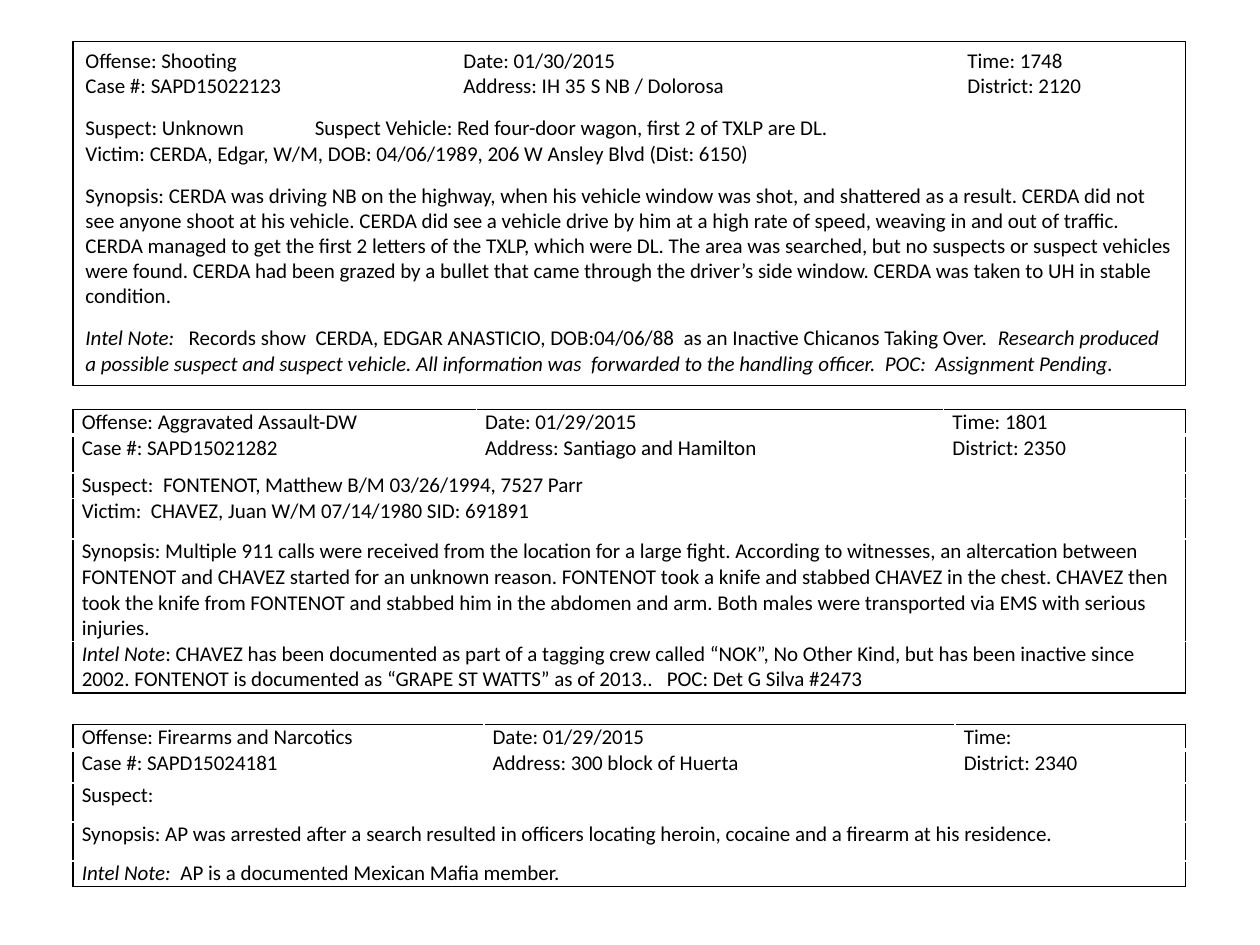
from lxml.etree import SubElement as sub
from pptx import Presentation
from pptx.dml.color import RGBColor as RGB
from pptx.enum.shapes import MSO_SHAPE as SHAPE
from pptx.enum.text import MSO_ANCHOR as ANCHOR, PP_ALIGN as ALIGN
from pptx.oxml.ns import qn
from pptx.util import Inches, Pt

INK = {"black": "000000", "white": "FFFFFF"}
LEFT, WIDE = 0.58, 8.83
TABS = (1.82, 3, 7)

# Each paragraph: gap before in points, then runs; a run in a tuple is italic
SHOOTING = [
    (0, ["Offense: Shooting\tDate: 01/30/2015\tTime: 1748"]),
    (0, ["Case #: SAPD15022123\tAddress: IH 35 S NB / Dolorosa\tDistrict: 2120"]),
    (9.6, ["Suspect: Unknown\tSuspect Vehicle: Red four-door wagon, first 2 of TXLP are DL."]),
    (0, ["Victim: CERDA, Edgar, W/M, DOB: 04/06/1989, 206 W Ansley Blvd (Dist: 6150)"]),
    (9.6, ["Synopsis: CERDA was driving NB on the highway, when his vehicle window was shot, "
           "and shattered as a result. CERDA did not see anyone shoot at his vehicle. CERDA did "
           "see a vehicle drive by him at a high rate of speed, weaving in and out of traffic. "
           "CERDA managed to get the first 2 letters of the TXLP, which were DL. The area was "
           "searched, but no suspects or suspect vehicles were found. CERDA had been grazed by "
           "a bullet that came through the driver’s side window. CERDA was taken to UH in "
           "stable condition."]),
    (9.6, [("Intel Note:  ",),
           " Records show  CERDA, EDGAR ANASTICIO, DOB:04/06/88  as an Inactive Chicanos "
           "Taking Over.  ",
           ("Research produced a possible suspect and suspect vehicle. All information was  "
            "forwarded to the handling officer.  POC:  Assignment Pending.",)]),
]

# Each row: one list of runs per cell; a lone cell spans the table
ASSAULT = [
    [["Offense: Aggravated Assault-DW"], ["Date: 01/29/2015"], ["Time: 1801"]],
    [["Case #: SAPD15021282"], ["Address: Santiago and Hamilton"], ["District: 2350"]],
    [["Suspect:  FONTENOT, Matthew B/M 03/26/1994, 7527 Parr"]],
    [["Victim:  CHAVEZ, Juan W/M 07/14/1980 SID: 691891"]],
    [["Synopsis: Multiple 911 calls were received from the location for a large fight. "
      "According to witnesses, an altercation between FONTENOT and CHAVEZ started for an "
      "unknown reason. FONTENOT took a knife and stabbed CHAVEZ in the chest. CHAVEZ then "
      "took the knife from FONTENOT and stabbed him in the abdomen and arm. Both males were "
      "transported via EMS with serious injuries."]],
    [[("Intel Note",),
      ": CHAVEZ has been documented as part of a tagging crew called “NOK”, No Other Kind, "
      "but has been inactive since 2002. FONTENOT is documented as “GRAPE ST WATTS” as of "
      "2013..   POC: Det G Silva #2473"]],
]
FIREARMS = [
    [["Offense: Firearms and Narcotics"], ["Date: 01/29/2015"], ["Time:"]],
    [["Case #: SAPD15024181"], ["Address: 300 block of Huerta"], ["District: 2340"]],
    [["Suspect:"]],
    [["Synopsis: AP was arrested after a search resulted in officers locating heroin, "
      "cocaine and a firearm at his residence."]],
    [[("Intel Note:  ",), "AP is a documented Mexican Mafia member."]],
]


def color(name):
    return RGB.from_string(INK[name])


def write(para, runs, size=12, font="Calibri", ink="black", gap=0, tabs=()):
    para.alignment = ALIGN.LEFT
    para.space_before = Pt(gap)
    if tabs:
        stops = sub(para._p.get_or_add_pPr(), qn("a:tabLst"))
        for pos in tabs:
            sub(stops, qn("a:tab"), pos=str(Inches(pos)), algn="l")
    for part in runs:
        run = para.add_run()
        run.font.italic = isinstance(part, tuple)
        run.text = part[0] if run.font.italic else part
        run.font.size, run.font.name = Pt(size), font
        run.font.color.rgb = color(ink)


def edge(cell, side, ink, width=1):
    line = sub(cell._tc.get_or_add_tcPr(), qn(f"a:ln{side}"), w=str(Pt(width)))
    sub(sub(line, qn("a:solidFill")), qn("a:srgbClr"), val=INK[ink])


def report(slide, top, cols, highs, rows):
    """Table with a black outer frame and white inner borders."""
    last, end = len(rows) - 1, len(cols) - 1
    frame = slide.shapes.add_table(len(rows), len(cols), Inches(LEFT), Inches(top),
                                   Inches(WIDE), Inches(sum(highs)))
    table = frame.table
    table.first_row = table.horz_banding = False
    for col, width in zip(table.columns, cols):
        col.width = Inches(width)
    for r, (row, high) in enumerate(zip(rows, highs)):
        table.rows[r].height = Inches(high)
        lone = len(row) == 1
        if lone:
            table.cell(r, 0).merge(table.cell(r, end))
        for c in range(end + 1):
            cell = table.cell(r, c)
            cell.margin_left = cell.margin_right = Inches(0.07)
            cell.margin_top = cell.margin_bottom = 0
            edge(cell, "L", "black" if c == 0 else "white")
            edge(cell, "R", "black" if c == end or lone and c == 0 else "white")
            edge(cell, "T", "black" if r == 0 else "white", 3 if r == 1 else 1)
            edge(cell, "B", "black" if r == last else "white", 3 if r == 0 else 1)
            cell.fill.solid()
            cell.fill.fore_color.rgb = color("white")
            if c < len(row):
                write(cell.text_frame.paragraphs[0], row[c])


def panel(slide, top, high, paras):
    """Outlined box holding one report as running text."""
    box = slide.shapes.add_shape(SHAPE.RECTANGLE, Inches(LEFT), Inches(top),
                                 Inches(WIDE), Inches(high))
    box.shadow.inherit = False
    box.fill.background()
    box.line.color.rgb, box.line.width = color("black"), Pt(1)
    frame = box.text_frame
    frame.word_wrap, frame.vertical_anchor = True, ANCHOR.TOP
    for i, (gap, runs) in enumerate(paras):
        para = frame.add_paragraph() if i else frame.paragraphs[0]
        # The vehicle line alone uses the first stop
        tabs = TABS[:1] if "Vehicle:" in runs[0] else TABS[1:]
        write(para, runs, gap=gap, tabs=tabs)


def main():
    prs = Presentation()
    prs.slide_width, prs.slide_height = Inches(10), Inches(7.5)
    slide = prs.slides.add_slide(prs.slide_layouts[6])
    report(slide, 3.25, (3.2, 3.71, 1.92), (0.2, 0.3, 0.2, 0.32, 0.81, 0.41), ASSAULT)
    report(slide, 5.75, (3.26, 3.74, 1.83), (0.2, 0.26, 0.31, 0.31, 0.2), FIREARMS)
    panel(slide, 0.33, 2.73, SHOOTING)
    prs.save("out.pptx")


if __name__ == "__main__":
    main()
